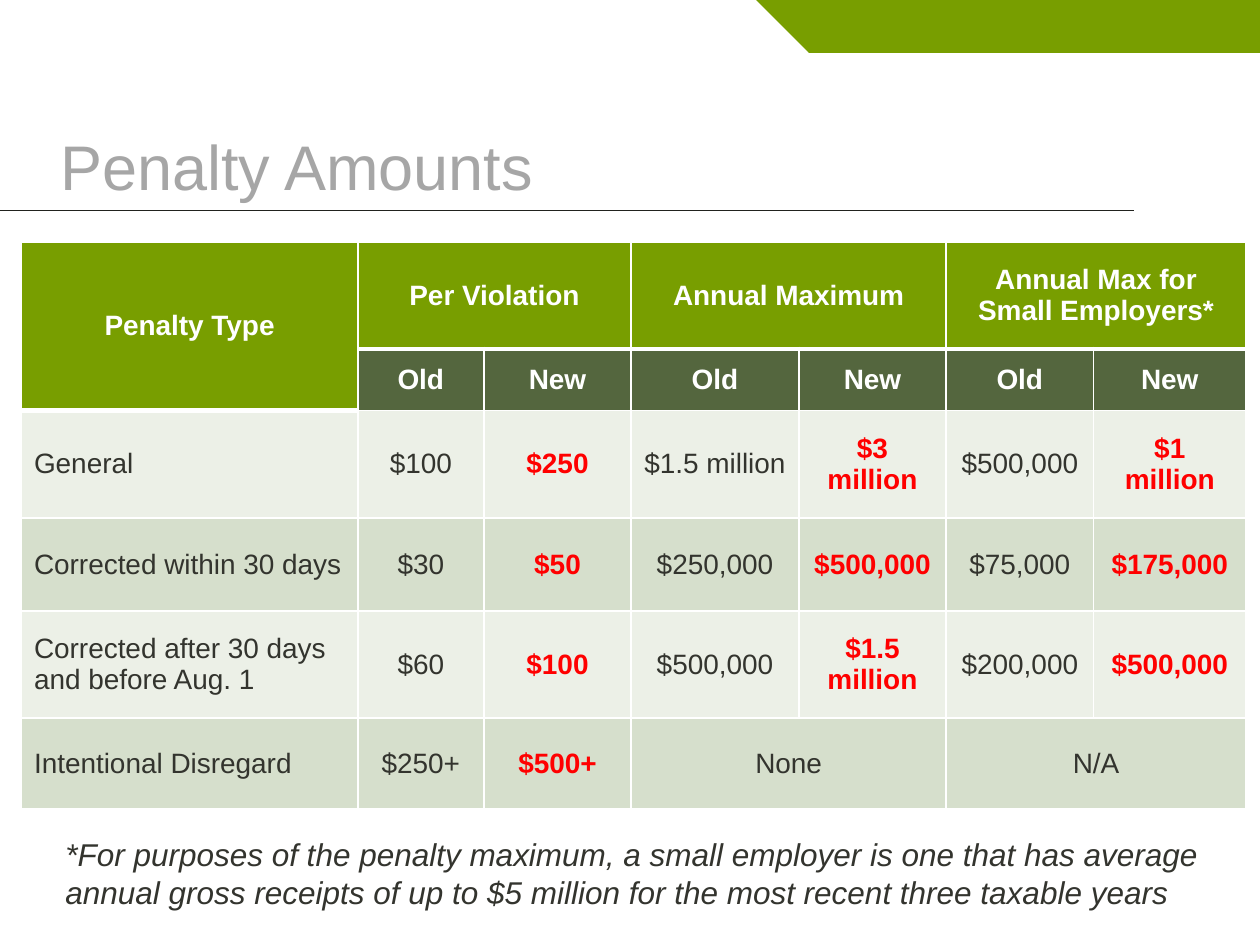
import pptx
import pptx.util
import pptx.dml.color
import pptx.enum.shapes
import pptx.enum.text
import pptx.oxml
import pptx.oxml.ns
from lxml import etree

Inches = pptx.util.Inches
Pt = pptx.util.Pt
Shape = pptx.enum.shapes.MSO_SHAPE
Align = pptx.enum.text.PP_ALIGN
Anchor = pptx.enum.text.MSO_ANCHOR
qn = pptx.oxml.ns.qn

GREEN, OLIVE, WHITE = "789E00", "54663E", "FFFFFF"
INK, RED, GREY = "33342E", "FF0000", "A6A6A6"
BANDS = ["ECF0E7", "D6DFCC"]

WIDTHS = [2.67, 1, 1.17, 1.33, 1.17, 1.17, 1.21]
HEIGHTS = [0.85, 0.49, 0.85, 0.74, 0.85, 0.72]
ROWS = [
    ["Penalty Type", "Per Violation", "", "Annual Maximum", "", "Annual Max for Small Employers*", ""],
    [""] + ["Old", "New"] * 3,
    ["General", "$100", "$250", "$1.5 million", "$3 million", "$500,000", "$1 million"],
    ["Corrected within 30 days", "$30", "$50", "$250,000", "$500,000", "$75,000", "$175,000"],
    ["Corrected after 30 days and before Aug. 1", "$60", "$100", "$500,000", "$1.5 million", "$200,000", "$500,000"],
    ["Intentional Disregard", "$250+", "$500+", "None", "", "N/A", ""],
]
MERGES = [(0, 0, 1, 0), (0, 1, 0, 2), (0, 3, 0, 4), (0, 5, 0, 6), (5, 3, 5, 4), (5, 5, 5, 6)]


def color(value):
    return pptx.dml.color.RGBColor.from_string(value)


def paint(fill, value):
    fill.solid()
    fill.fore_color.rgb = color(value)


def write(frame, text, size=16, ink=INK, bold=False, italic=False, align=Align.LEFT, gap=0):
    frame.word_wrap = True
    para = frame.paragraphs[0]
    para.alignment = align
    para.space_before = para.space_after = Pt(gap)
    run = para.add_run()
    run.text = text
    font = run.font
    font.name, font.size, font.bold, font.italic = "Arial", Pt(size), bold, italic
    font.color.rgb = color(ink)


def edge(cell, side, width):
    line = etree.SubElement(cell._tc.get_or_add_tcPr(), qn("a:ln" + side), w=str(Pt(width)))
    fill = etree.SubElement(line, qn("a:solidFill"))
    etree.SubElement(fill, qn("a:srgbClr"), val=WHITE)


def banner(slide, left, top, width, height):
    parts = [
        (Shape.RECTANGLE, left + height, width - height, 0),
        (Shape.RIGHT_TRIANGLE, left, height, 180),
    ]
    for kind, start, span, turn in parts:
        shape = slide.shapes.add_shape(kind, Inches(start), Inches(top), Inches(span), Inches(height))
        shape.rotation = turn
        shape.shadow.inherit = False
        paint(shape.fill, GREEN)
        shape.line.fill.background()


def heading(slide, left, top, width, height):
    base = Inches(top + height + 0.01)
    rule = slide.shapes.add_connector(
        pptx.enum.shapes.MSO_CONNECTOR.STRAIGHT, Inches(left), base, Inches(left + 9), base)
    rule.line.color.rgb = color("21221E")
    rule.line.width = Pt(0.25)
    etree.SubElement(rule._element.spPr, qn("a:effectLst"))
    box = slide.shapes.add_textbox(Inches(left), Inches(top), Inches(width), Inches(height))
    frame = box.text_frame
    frame.vertical_anchor = Anchor.BOTTOM
    frame.margin_left = Inches(0.48)
    write(frame, "Penalty Amounts", size=36, ink=GREY)


def style(row, col):
    if row < 2:
        return (GREEN if row == 0 or col == 0 else OLIVE), WHITE, True
    fresh = col in (2, 4, 6)
    return BANDS[row % 2], RED if fresh else INK, fresh


def penalties(slide, left, top, width, height):
    table = slide.shapes.add_table(
        len(ROWS), len(WIDTHS), Inches(left), Inches(top), Inches(width), Inches(height)).table
    for col, size in zip(table.columns, WIDTHS):
        col.width = Inches(size)
    for row, size in zip(table.rows, HEIGHTS):
        row.height = Inches(size)
    for r1, c1, r2, c2 in MERGES:
        table.cell(r1, c1).merge(table.cell(r2, c2))
    heavy = {(0, col) for col in range(len(WIDTHS))} | {(1, 0)}
    for row, texts in enumerate(ROWS):
        for col, text in enumerate(texts):
            cell = table.cell(row, col)
            fill, ink, bold = style(row, col)
            edge(cell, "L", 1)
            edge(cell, "R", 1)
            edge(cell, "T", 3 if (row - 1, col) in heavy else 1)
            edge(cell, "B", 3 if (row, col) in heavy else 1)
            paint(cell.fill, fill)
            cell.vertical_anchor = Anchor.MIDDLE
            if text:
                align = Align.LEFT if col == 0 and row > 1 else Align.CENTER
                write(cell.text_frame, text, ink=ink, bold=bold, align=align, gap=12)


def footnote(slide, left, top, width, height):
    box = slide.shapes.add_textbox(Inches(left), Inches(top), Inches(width), Inches(height))
    write(box.text_frame,
          "*For purposes of the penalty maximum, a small employer is one that has average annual "
          "gross receipts of up to $5 million for the most recent three taxable years",
          size=18, italic=True)


def main():
    deck = pptx.Presentation()
    deck.slide_width, deck.slide_height = Inches(10), Inches(7.5)
    slide = deck.slides.add_slide(deck.slide_layouts[6])
    banner(slide, 6, 0, 4, 0.42)
    heading(slide, 0, 0.45, 9.5, 1.21)
    penalties(slide, 0.17, 1.92, 9.71, 4.5)
    footnote(slide, 0.42, 6.58, 9.25, 0.71)
    deck.save("out.pptx")


if __name__ == "__main__":
    main()
